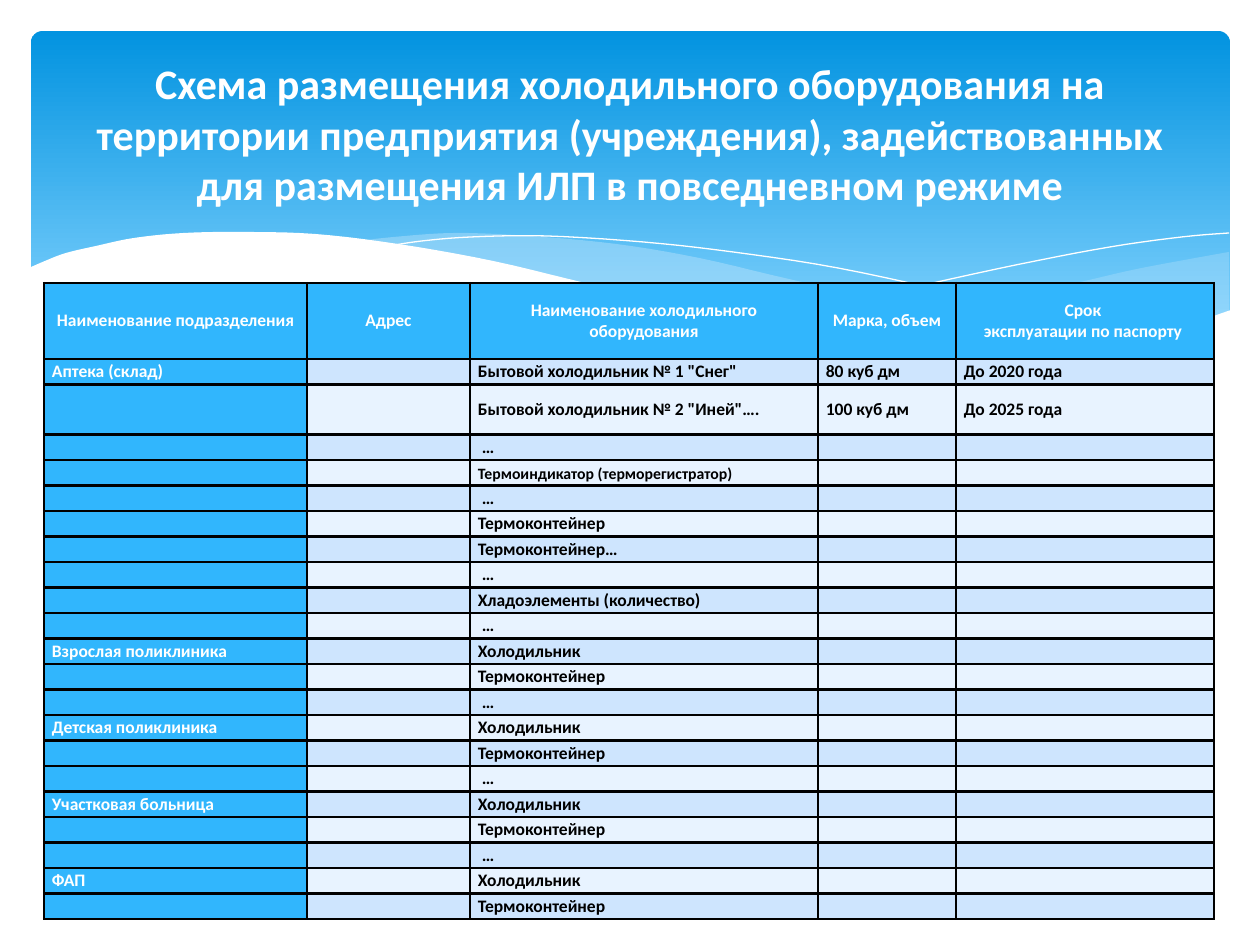
from lxml.etree import SubElement
from pptx import Presentation
from pptx.dml.color import RGBColor
from pptx.enum.shapes import MSO_SHAPE as Preset
from pptx.enum.text import MSO_ANCHOR as Anchor, PP_ALIGN as Align
from pptx.oxml import parse_xml
from pptx.oxml.ns import nsdecls, qn
from pptx.util import Emu, Pt

FONT = "Calibri"
WHITE = RGBColor(0xFF, 0xFF, 0xFF)
BLACK = RGBColor(0x00, 0x00, 0x00)
SKY_TOP = RGBColor(0x02, 0x93, 0xE0)
SKY_BOTTOM = RGBColor(0x83, 0xD3, 0xFE)
WAVE = RGBColor(0xC6, 0xE7, 0xFC)
HEAD = RGBColor(0x31, 0xB6, 0xFD)
BANDS = [RGBColor(0xE8, 0xF3, 0xFF), RGBColor(0xCE, 0xE5, 0xFE)]

TITLE = ("Схема размещения холодильного оборудования на территории предприятия "
         "(учреждения), задействованных для размещения ИЛП в повседневном режиме")
HEADERS = ["Наименование подразделения", "Адрес", "Наименование холодильного оборудования",
           "Марка, объем", "Срок \nэксплуатации по паспорту "]
MORE = " …"
INDICATOR = "Термоиндикатор (терморегистратор)"
UNITS = [
    ("Аптека (склад)", [
        ('Бытовой холодильник № 1 "Снег"', "80 куб дм", "До 2020 года"),
        ('Бытовой холодильник № 2 "Иней"….', "100 куб дм", "До 2025 года"),
        (MORE,), (INDICATOR,), (MORE,), ("Термоконтейнер",), ("Термоконтейнер…",),
        (MORE,), ("Хладоэлементы (количество)",), (MORE,)]),
    ("Взрослая поликлиника", [("Холодильник",), ("Термоконтейнер",), (MORE,)]),
    ("Детская поликлиника", [("Холодильник",), ("Термоконтейнер",), (MORE,)]),
    ("Участковая больница", [("Холодильник",), ("Термоконтейнер",), (MORE,)]),
    ("ФАП", [("Холодильник",), ("Термоконтейнер",)]),
]

COLUMNS = [263, 163, 348, 138, 258]
TABLE_LEFT, TABLE_TOP, TABLE_HEIGHT = 44, 283, 636
TALL_ROWS = {0: 76, 2: 50}

RIGHT_WAVE = [
    [(1229, 252), (1142, 268), (1085, 281), (982, 305), (890, 324), (833, 334)],
    [(833, 334), (888, 341), (954, 348), (1026, 350), (1087, 347), (1140, 339),
     (1187, 326), (1229, 311)],
]
MIDDLE_WAVE = [
    [(1125, 344), (1055, 334), (934, 311), (793, 280), (699, 258), (616, 244), (529, 236),
     (455, 233), (394, 237), (360, 241)],
    [(360, 241), (431, 251), (509, 266), (619, 292), (736, 318), (838, 335), (927, 346),
     (1017, 350), (1080, 349), (1125, 344)],
]
LEFT_LINE = [[(389, 246), (422, 241), (471, 237), (546, 236), (643, 242), (733, 252),
              (838, 268), (958, 294), (1047, 316), (1143, 343)]]
RIGHT_LINE = [[(772, 324), (823, 310), (907, 289), (1016, 265), (1110, 247), (1182, 237),
               (1229, 233)]]
WHITE_WAVE = [
    [(1231, 310), (1159, 333), (1071, 346), (959, 347), (842, 334), (730, 315), (598, 286),
     (493, 261), (398, 244), (315, 234), (243, 232), (184, 233), (134, 238), (96, 246),
     (66, 253), (45, 261), (29, 268)],
    [(29, 415), (1231, 415)],
]
WAVES = [
    (RIGHT_WAVE, WAVE, 29),
    (MIDDLE_WAVE, WAVE, 40),
    (LEFT_LINE, None, 100),
    (RIGHT_LINE, None, 100),
    (WHITE_WAVE, WHITE, 100),
]


def px(value):
    return Emu(round(value * 914400 / 126))


def smooth(points, steps=5):
    if len(points) < 3:
        return points
    ends = [points[0], *points, points[-1]]
    curve = [points[0]]
    for a, b, c, d in zip(ends, ends[1:], ends[2:], ends[3:]):
        for step in range(1, steps + 1):
            t = step / steps
            curve.append(tuple(
                q + t * (r - p) / 2 + t * t * (p - 2.5 * q + 2 * r - s / 2)
                + t ** 3 * (1.5 * (q - r) + (s - p) / 2)
                for p, q, r, s in zip(a, b, c, d)))
    return curve


def add_wave(page, edges, color, opacity):
    start, *rest = [(px(x), px(y)) for edge in edges for x, y in smooth(edge)]
    builder = page.shapes.build_freeform(*start)
    builder.add_line_segments(rest, close=color is not None)
    wave = builder.convert_to_shape()
    wave.shadow.inherit = False
    if color is None:
        wave.fill.background()
        wave.line.color.rgb = WHITE
        wave.line.width = Pt(0)
        return
    wave.fill.solid()
    wave.fill.fore_color.rgb = color
    wave.line.fill.background()
    if opacity < 100:
        paint = wave.fill._xPr.find(qn("a:solidFill"))[0]
        SubElement(paint, qn("a:alpha")).set("val", str(opacity * 1000))


def write(frame, text, size=10, color=BLACK, align=Align.JUSTIFY, spacing=None):
    frame.word_wrap = True
    for index, line in enumerate(text.split("\n")):
        para = frame.add_paragraph() if index else frame.paragraphs[0]
        para.alignment = align
        para.line_spacing = spacing
        if not line:
            para._p.get_or_add_endParaRPr().set("sz", str(size * 100))
            continue
        span = para.add_run()
        span.text = line
        span.font.name = FONT
        span.font.size = Pt(size)
        span.font.bold = True
        span.font.color.rgb = color


def style_cell(cell, color):
    cell.margin_left = cell.margin_right = px(8)
    cell.margin_top = cell.margin_bottom = 0
    cell.vertical_anchor = Anchor.MIDDLE
    props = cell._tc.get_or_add_tcPr()
    for side in "LRTB":
        props.append(parse_xml(
            f'<a:ln{side} {nsdecls("a")} w="{Pt(1.5)}"><a:solidFill>'
            f'<a:srgbClr val="{BLACK}"/></a:solidFill></a:ln{side}>'))
    cell.fill.solid()
    cell.fill.fore_color.rgb = color


def add_sky(page):
    sky = page.shapes.add_shape(Preset.ROUNDED_RECTANGLE, px(31), px(31), px(1199), px(340))
    sky.adjustments[0] = 0.034
    sky.shadow.inherit = False
    sky.line.fill.background()
    sky.fill.gradient()
    sky.fill.gradient_angle = 270
    for stop, color, place in zip(sky.fill.gradient_stops, (SKY_TOP, SKY_BOTTOM), (0, 0.9)):
        stop.color.rgb = color
        stop.position = place


def add_equipment_table(page):
    rows = [HEADERS]
    for unit, items in UNITS:
        for index, item in enumerate(items):
            row = ["" if index else unit, "", *item]
            rows.append(row + [""] * (len(HEADERS) - len(row)))
    table = page.shapes.add_table(len(rows), len(COLUMNS), px(TABLE_LEFT), px(TABLE_TOP),
                                  px(sum(COLUMNS)), px(TABLE_HEIGHT)).table
    for column, width in zip(table.columns, COLUMNS):
        column.width = px(width)
    plain = (TABLE_HEIGHT - sum(TALL_ROWS.values())) / (len(rows) - len(TALL_ROWS))
    for r, row in enumerate(rows):
        table.rows[r].height = px(TALL_ROWS.get(r, plain))
        for c, text in enumerate(row):
            heading = r == 0 or c == 0
            cell = table.cell(r, c)
            style_cell(cell, HEAD if heading else BANDS[r % 2])
            look = {"color": WHITE if heading else BLACK}
            if r == 0:
                look["align"] = Align.CENTER
            if text == INDICATOR:
                look.update(size=9, align=Align.LEFT, spacing=1.15)
            write(cell.text_frame, text, **look)


def main():
    deck = Presentation()
    deck.slide_width, deck.slide_height = px(1260), px(945)
    page = deck.slides.add_slide(deck.slide_layouts[6])
    add_sky(page)
    for edges, color, opacity in WAVES:
        add_wave(page, edges, color, opacity)
    add_equipment_table(page)
    box = page.shapes.add_textbox(px(63), px(47), px(1134), px(173))
    box.text_frame.vertical_anchor = Anchor.MIDDLE
    write(box.text_frame, TITLE, size=24, color=WHITE, align=Align.CENTER)
    deck.save("out.pptx")


if __name__ == "__main__":
    main()
